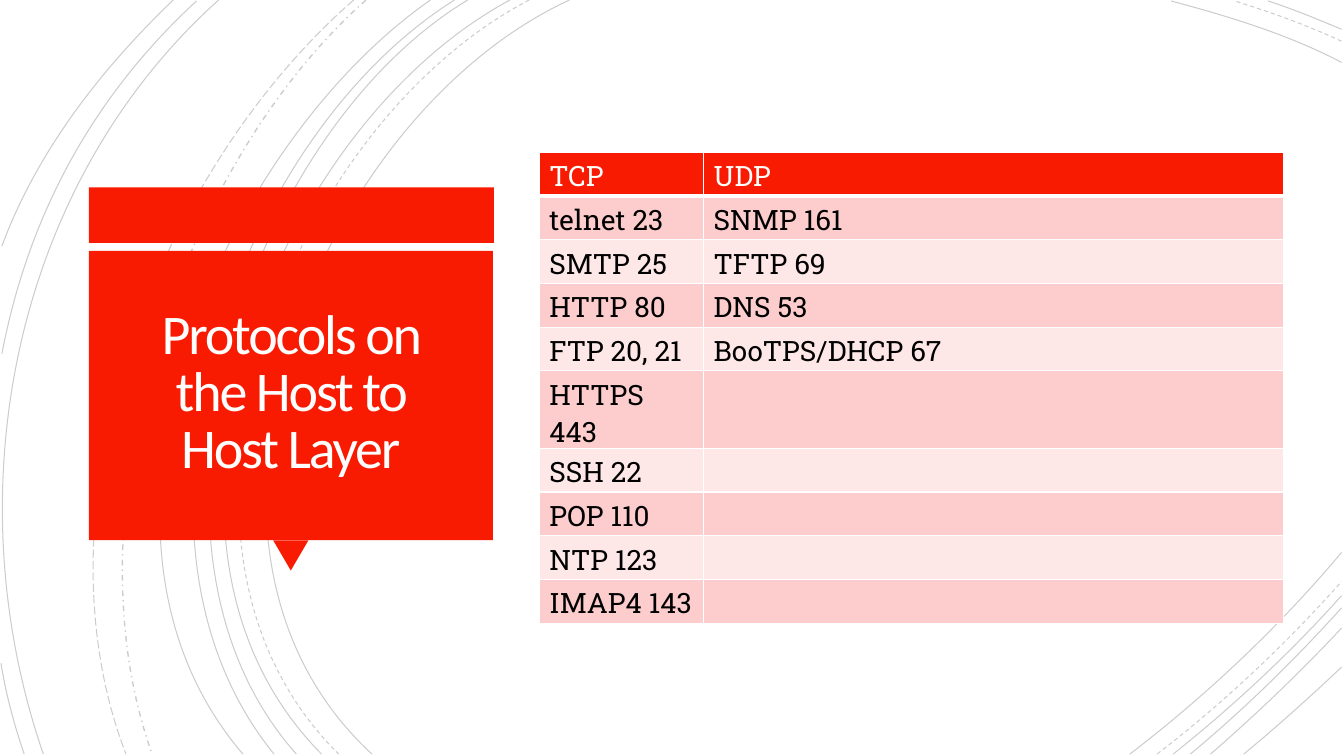
from dataclasses import dataclass
from itertools import product

from lxml import etree
from pptx import Presentation
from pptx import util as u
from pptx.dml.color import RGBColor
from pptx.enum import dml, shapes, text
from pptx.oxml import ns

RED = RGBColor(0xF8, 0x1B, 0x02)
PINK = RGBColor(0xFC, 0xCD, 0xCC)
PALE_PINK = RGBColor(0xFE, 0xE8, 0xE7)
WHITE = RGBColor(0xFF, 0xFF, 0xFF)
TITLE_WHITE = RGBColor(0xFF, 0xFE, 0xFF)
BLACK = RGBColor(0, 0, 0)

SOLID = dml.MSO_LINE.SOLID
DASH = dml.MSO_LINE.DASH
BOTTOM = 538.6  # lower end of the background arcs
RIGHT = 958.3  # right end of the background arcs


@dataclass(frozen=True)
class Arc:
    """Cubic curve: start, two control points, end (points)."""
    start: tuple
    control_1: tuple
    control_2: tuple
    end: tuple
    dash: dml.MSO_LINE = SOLID
    width: float = 0.75


@dataclass(frozen=True)
class Block:
    kind: shapes.MSO_SHAPE
    left: float
    top: float
    width: float
    height: float
    rotation: float = 0


ARCS = [
    # Large arcs on the left
    Arc((406.8, 0), (226.8, 82.8), (103, 388.8), (265.7, BOTTOM)),
    Arc((378, 0), (205.2, 90), (88.6, 386.6), (241.9, BOTTOM), DASH),
    Arc((364.3, 0), (194.4, 91.4), (79.2, 386.6), (229.7, BOTTOM)),
    Arc((334.1, 0), (175.7, 95.8), (79.2, 389.5), (211.7, BOTTOM)),
    Arc((324.7, 0), (166.3, 99.4), (69.8, 383.8), (195.8, BOTTOM)),
    Arc((307.4, 0), (156.2, 105.8), (38.2, 380.9), (173.5, BOTTOM)),
    Arc((261.4, 0), (126.7, 119.5), (46.8, 366.5), (108.7, BOTTOM),
        dml.MSO_LINE.DASH_DOT, 1),
    Arc((252.7, 0), (113, 121.7), (20.9, 359.3), (90, BOTTOM),
        dml.MSO_LINE.LONG_DASH),
    Arc((156.2, 0), (7.9, 133.2), (-33.1, 352.8), (31, BOTTOM)),
    Arc((140.4, 0.7), (66.2, 69.1), (20.2, 154.1), (1.4, 252.7)),
    Arc((0.7, 473.8), (4.3, 496.1), (10.1, 517.7), (17.3, BOTTOM)),
    Arc((123.8, 0), (72, 49.7), (26.6, 108), (1.4, 175.7)),
    # Top right corner
    Arc((RIGHT, 44.6), (920.2, 24.5), (877, 11.5), (836.6, 0.7)),
    Arc((RIGHT, 29.5), (933.8, 18), (907.2, 8.6), (882, 0.7), DASH),
    Arc((RIGHT, 20.9), (941, 13.7), (923.8, 6.5), (905.8, 0.7)),
    # Bottom right corner
    Arc((807.1, BOTTOM), (861.8, 496.8), (913.7, 447.8), (RIGHT, 394.6)),
    Arc((826.6, BOTTOM), (873.4, 502.6), (918, 460.8), (RIGHT, 415.4), DASH),
    Arc((838.1, BOTTOM), (880.6, 504.7), (921.6, 466.6), (RIGHT, 425.5)),
    Arc((850.3, BOTTOM), (888.5, 506.9), (924.5, 471.6), (RIGHT, 434.2)),
    Arc((864.7, BOTTOM), (897.1, 510.5), (928.8, 480.2), (RIGHT, 448.6)),
    Arc((888.5, BOTTOM), (912.2, 519.1), (935.3, 498.2), (RIGHT, 476.6)),
]

BLOCKS = [
    Block(shapes.MSO_SHAPE.RECTANGLE, 63.4, 133.9, 289.4, 39.6),
    Block(shapes.MSO_SHAPE.ISOSCELES_TRIANGLE, 195.1, 385.9, 25.2, 21.6, 180),
    Block(shapes.MSO_SHAPE.RECTANGLE, 63.4, 179.3, 288.7, 206.6),
]

PROTOCOLS = [
    ("TCP", "UDP"),
    ("telnet 23", "SNMP 161"),
    ("SMTP 25", "TFTP 69"),
    ("HTTP 80", "DNS 53"),
    ("FTP 20, 21", "BooTPS/DHCP 67"),
    ("HTTPS 443", ""),
    ("SSH 22", ""),
    ("POP 110", ""),
    ("NTP 123", ""),
    ("IMAP4 143", ""),
]
COLUMN_WIDTHS = (117.4, 414)
ROW_HEIGHT = 29.5


def draw_arc(slide, arc: Arc) -> None:
    builder = slide.shapes.build_freeform(*map(u.Pt, arc.start))
    vertices = [tuple(map(u.Pt, point))
                for point in (arc.control_1, arc.control_2, arc.end)]
    builder.add_line_segments(vertices, close=False)
    shape = builder.convert_to_shape()
    shape.shadow.inherit = False
    shape.fill.background()
    shape.line.width = u.Pt(arc.width)
    shape.line.dash_style = arc.dash
    shape.line.color.rgb = BLACK
    # Turn the three segments into one cubic curve
    outline = shape._element.find(".//" + ns.qn("a:path"))
    curve = etree.SubElement(outline, ns.qn("a:cubicBezTo"))
    for segment in outline.findall(ns.qn("a:lnTo")):
        curve.append(segment[0])
        outline.remove(segment)
    # Line opacity of 20 %
    color = shape.line._ln.find(".//" + ns.qn("a:srgbClr"))
    etree.SubElement(color, ns.qn("a:alpha"), val="20000")


def draw_block(slide, block: Block) -> None:
    shape = slide.shapes.add_shape(
        block.kind, u.Pt(block.left), u.Pt(block.top),
        u.Pt(block.width), u.Pt(block.height))
    shape.shadow.inherit = False
    shape.rotation = block.rotation
    shape.fill.solid()
    shape.fill.fore_color.rgb = RED
    shape.line.fill.background()


def draw_title(slide, title: str) -> None:
    shape = slide.shapes.add_textbox(
        u.Pt(69.8), u.Pt(185), u.Pt(275.8), u.Pt(193.7))
    frame = shape.text_frame
    frame.word_wrap = True
    frame.vertical_anchor = text.MSO_ANCHOR.MIDDLE
    frame.margin_left = frame.margin_right = u.Pt(18)
    frame.margin_top = frame.margin_bottom = u.Pt(18)
    paragraph = frame.paragraphs[0]
    paragraph.text = title
    paragraph.alignment = text.PP_ALIGN.CENTER
    paragraph.line_spacing = 0.85
    paragraph.font.name = "Calibri"
    paragraph.font.size = u.Pt(40)
    paragraph.font.color.rgb = TITLE_WHITE
    paragraph.runs[0]._r.get_or_add_rPr().set("spc", "-150")


def draw_borders(cell, bottom_width: float) -> None:
    properties = cell._tc.get_or_add_tcPr()
    for side, width in zip("LRTB", (1, 1, 1, bottom_width)):
        line = etree.SubElement(properties, ns.qn(f"a:ln{side}"),
                                w=str(u.Pt(width)))
        fill = etree.SubElement(line, ns.qn("a:solidFill"))
        etree.SubElement(fill, ns.qn("a:srgbClr"), val=str(WHITE))


def draw_table(slide, rows: list) -> None:
    table = slide.shapes.add_table(
        len(rows), len(COLUMN_WIDTHS), u.Pt(385.2), u.Pt(108.7),
        u.Pt(sum(COLUMN_WIDTHS)), u.Pt(ROW_HEIGHT * len(rows))).table
    for column, width in zip(table.columns, COLUMN_WIDTHS):
        column.width = u.Pt(width)
    for row, column in product(range(len(rows)), range(len(COLUMN_WIDTHS))):
        header = row == 0
        cell = table.cell(row, column)
        draw_borders(cell, 3 if header else 1)
        cell.fill.solid()
        cell.fill.fore_color.rgb = RED if header else (PALE_PINK, PINK)[row % 2]
        paragraph = cell.text_frame.paragraphs[0]
        paragraph.text = rows[row][column]
        paragraph.font.name = "Roboto Slab"
        paragraph.font.size = u.Pt(20)
        paragraph.font.bold = False
        paragraph.font.color.rgb = WHITE if header else BLACK


def main() -> None:
    presentation = Presentation()
    presentation.slide_width = u.Pt(960)
    presentation.slide_height = u.Pt(540)
    slide = presentation.slides.add_slide(presentation.slide_layouts[6])
    for arc in ARCS:
        draw_arc(slide, arc)
    for block in BLOCKS:
        draw_block(slide, block)
    draw_title(slide, "Protocols on the Host to Host Layer")
    draw_table(slide, PROTOCOLS)
    presentation.save("out.pptx")


if __name__ == "__main__":
    main()
